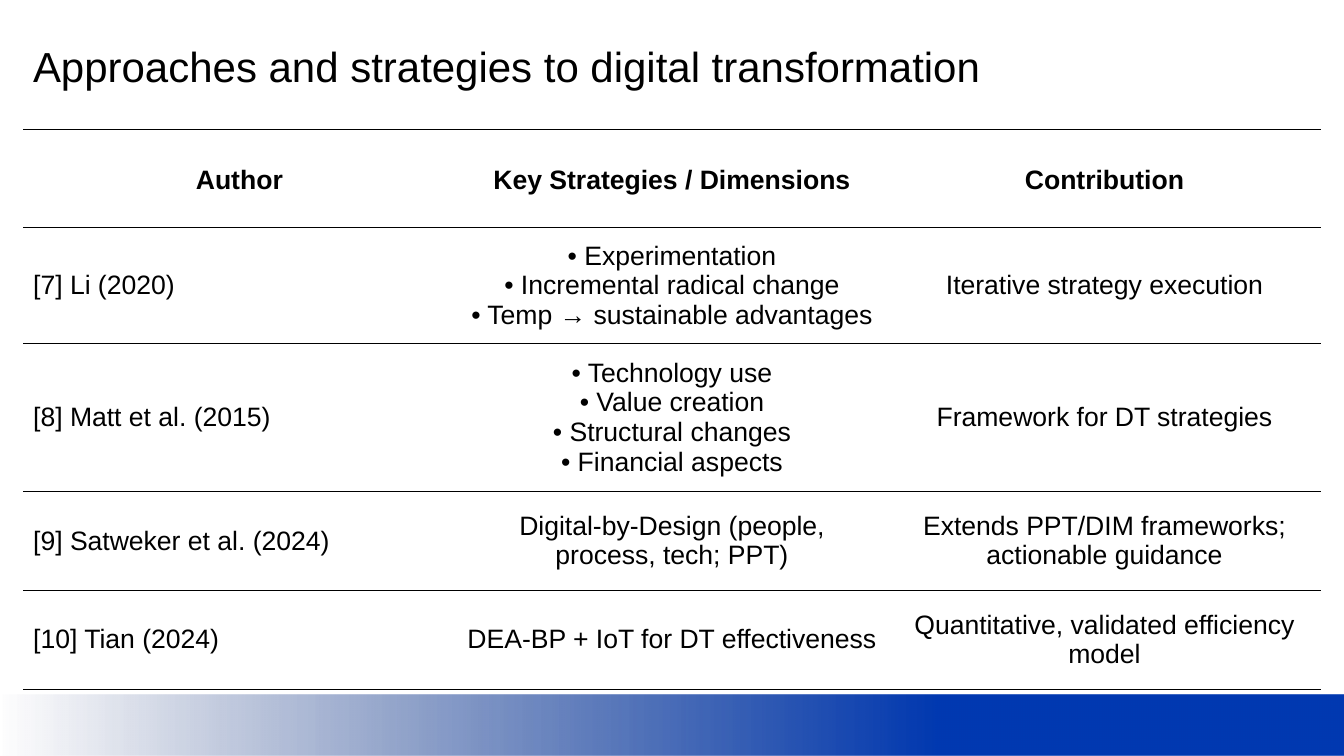
from lxml.etree import SubElement
from pptx import Presentation
from pptx.dml.color import RGBColor
from pptx.enum.shapes import MSO_SHAPE
from pptx.enum.text import MSO_ANCHOR, PP_ALIGN
from pptx.oxml.ns import qn
from pptx.util import Pt

# Content
TITLE = "Approaches and strategies to digital transformation"
HEADERS = ("Author", "Key Strategies / Dimensions", "Contribution")
STUDIES = [
    ("[7] Li (2020)",
     "• Experimentation\n• Incremental radical change\n• Temp → sustainable advantages",
     "Iterative strategy execution"),
    ("[8] Matt et al. (2015)",
     "• Technology use\n• Value creation\n• Structural changes\n• Financial aspects",
     "Framework for DT strategies"),
    ("[9] Satweker et al. (2024)",
     "Digital-by-Design (people, process, tech; PPT)",
     "Extends PPT/DIM frameworks; actionable guidance"),
    ("[10] Tian (2024)",
     "DEA-BP + IoT for DT effectiveness",
     "Quantitative, validated efficiency model"),
]

THEME = {
    "font": "Arial", "title_size": 30, "table_size": 19,
    "text": "000000", "rule": "000000", "rule_width": 0.75,
    "band_start": "002166", "band_end": "0039B1",
}

# Layout in points
SLIDE_WIDTH, SLIDE_HEIGHT = 960, 540
BAND_HEIGHT = 44
LEFT, INSET = 16.5, 7.2
TITLE_TOP, TITLE_HEIGHT = 22, 456
TABLE_TOP = 92.2
ROW_HEIGHTS = (70.4, 82, 98.6, 70.6, 70.6)
CONTENT_WIDTH = SLIDE_WIDTH - 2 * LEFT


def style_text(frame, size, bold=False, align=PP_ALIGN.LEFT, spacing=None):
    frame.word_wrap = True
    for para in frame.paragraphs:
        para.alignment = align
        if spacing:
            para.line_spacing = spacing
        for span in para.runs:
            span.font.name = THEME["font"]
            span.font.size = Pt(size)
            span.font.bold = bold
            span.font.color.rgb = RGBColor.from_string(THEME["text"])


def set_insets(target):
    target.margin_left = target.margin_right = Pt(INSET)
    target.margin_top = target.margin_bottom = Pt(INSET)


def set_rules(cell):
    """Rule above and below the cell, none at its sides."""
    properties = cell._tc.get_or_add_tcPr()
    for side in ("L", "R", "T", "B"):
        line = SubElement(properties, qn(f"a:ln{side}"), w=str(Pt(THEME["rule_width"])))
        if side in "LR":
            SubElement(line, qn("a:noFill"))
        else:
            fill = SubElement(line, qn("a:solidFill"))
            SubElement(fill, qn("a:srgbClr"), val=THEME["rule"])


def add_band(page):
    band = page.shapes.add_shape(
        MSO_SHAPE.RECTANGLE, 0, Pt(SLIDE_HEIGHT - BAND_HEIGHT),
        Pt(SLIDE_WIDTH), Pt(BAND_HEIGHT))
    band.shadow.inherit = False
    band.line.fill.background()
    band.fill.gradient()
    band.fill.gradient_angle = 0
    start, end = band.fill.gradient_stops
    start.position, end.position = 0, 0.7
    start.color.rgb = RGBColor.from_string(THEME["band_start"])
    end.color.rgb = RGBColor.from_string(THEME["band_end"])
    # The band fades in from fully transparent
    first_color = next(band._element.spPr.iter(qn("a:srgbClr")))
    SubElement(first_color, qn("a:alpha"), val="0")
    # Hold the solid colour to the right edge
    stops = next(band._element.spPr.iter(qn("a:gsLst")))
    last = SubElement(stops, qn("a:gs"), pos="100000")
    SubElement(last, qn("a:srgbClr"), val=THEME["band_end"])


def add_title(page):
    box = page.shapes.add_textbox(
        Pt(LEFT), Pt(TITLE_TOP), Pt(CONTENT_WIDTH), Pt(TITLE_HEIGHT))
    box.text_frame.text = TITLE
    set_insets(box.text_frame)
    style_text(box.text_frame, THEME["title_size"])


def add_studies(page):
    rows = [HEADERS, *STUDIES]
    table = page.shapes.add_table(
        len(rows), len(HEADERS), Pt(LEFT), Pt(TABLE_TOP),
        Pt(CONTENT_WIDTH), Pt(sum(ROW_HEIGHTS))).table
    table.first_row = table.horz_banding = False
    for column in table.columns:
        column.width = Pt(CONTENT_WIDTH / len(HEADERS))
    for r, (texts, height) in enumerate(zip(rows, ROW_HEIGHTS)):
        table.rows[r].height = Pt(height)
        header = r == 0
        for c, text in enumerate(texts):
            cell = table.cell(r, c)
            cell.text_frame.text = text
            cell.vertical_anchor = MSO_ANCHOR.MIDDLE
            set_insets(cell)
            set_rules(cell)
            cell.fill.background()
            align = PP_ALIGN.CENTER if header or c else PP_ALIGN.LEFT
            style_text(cell.text_frame, THEME["table_size"], header, align,
                       1.15 if header else None)


def main():
    deck = Presentation()
    deck.slide_width, deck.slide_height = Pt(SLIDE_WIDTH), Pt(SLIDE_HEIGHT)
    page = deck.slides.add_slide(deck.slide_layouts[6])
    add_band(page)
    add_title(page)
    add_studies(page)
    deck.save("out.pptx")


if __name__ == "__main__":
    main()
